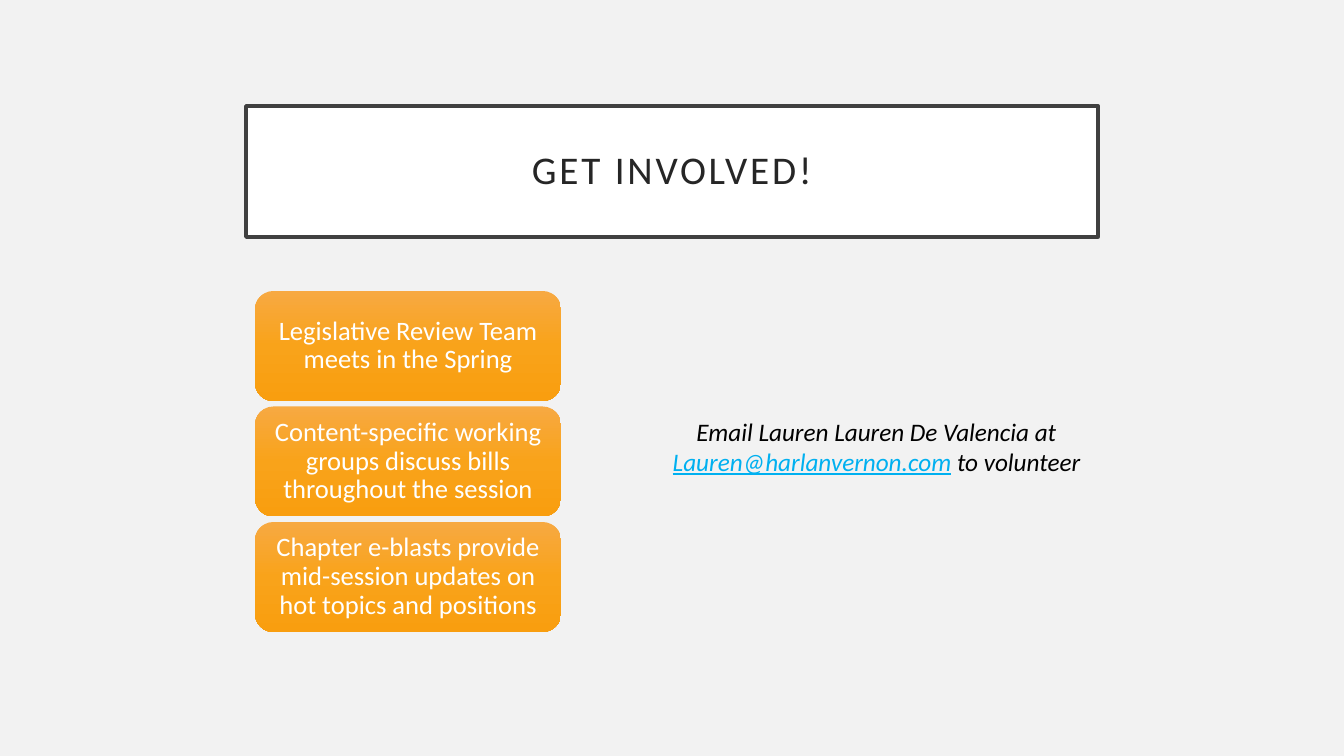
from lxml import etree
from pptx import Presentation
from pptx import util as u
from pptx.dml.color import RGBColor
from pptx.enum import shapes, text
from pptx.oxml.ns import qn

FONT = "Calibri"
TITLE = "GET INVOLVED!"
ACTIONS = [
    "Legislative Review Team meets in the Spring",
    "Content-specific working groups discuss bills throughout the session",
    "Chapter e-blasts provide mid-session updates on hot topics and positions",
]
CONTACT = [  # text, colour, underlined
    ("Email Lauren Lauren De Valencia at ", "000000", False),
    ("Lauren@harlanvernon.com", "00B0F0", True),
    (" to volunteer", "000000", False),
]
ORANGE = [(0, "F7A942"), (50, "F9A31A"), (100, "F99E0F")]

TITLE_BOX = (246, 106, 852, 131)
CONTACT_BOX = (655, 411, 443, 72)
CARD_X, CARD_W, CARD_H = 255, 306, 110
CARDS_TOP, CARDS_BOTTOM = 291, 632


def px(n):
    return u.Emu(round(n * 914400 / 100.8))


def rgb(value):
    return RGBColor.from_string(value)


def set_frame(tf, inset_x, inset_y, anchor):
    tf.word_wrap = True
    tf.auto_size = text.MSO_AUTO_SIZE.NONE
    tf.vertical_anchor = anchor
    tf.margin_left = tf.margin_right = px(inset_x)
    tf.margin_top = tf.margin_bottom = px(inset_y)


def add_run(p, words, size, color):
    p.alignment = text.PP_ALIGN.CENTER
    r = p.add_run()
    r.text = words
    r.font.name = FONT
    r.font.size = u.Pt(size)
    r.font.color.rgb = rgb(color)
    return r


def fill_gradient(sp, stops):
    """Fill from top to bottom with any number of (percent, colour) stops."""
    sp.fill.gradient()
    sp.fill.gradient_angle = 270
    gs_list = sp._element.spPr.find(qn("a:gradFill")).find(qn("a:gsLst"))
    for gs in list(gs_list):
        gs_list.remove(gs)
    for percent, color in stops:
        gs = etree.SubElement(gs_list, qn("a:gs"), pos=str(percent * 1000))
        etree.SubElement(gs, qn("a:srgbClr"), val=color)


def add_title(s):
    sp = s.shapes.title
    sp.left, sp.top, sp.width, sp.height = map(px, TITLE_BOX)
    sp.fill.solid()
    sp.fill.fore_color.rgb = rgb("FFFFFF")
    sp.line.color.rgb = rgb("404040")
    sp.line.width = u.Pt(2.5)
    set_frame(sp.text_frame, 20, 20, text.MSO_ANCHOR.MIDDLE)
    p = sp.text_frame.paragraphs[0]
    p.line_spacing = 0.9
    r = add_run(p, TITLE, 28, "262626")
    r.font._element.set("spc", "200")


def add_card(s, top, words):
    sp = s.shapes.add_shape(shapes.MSO_SHAPE.ROUNDED_RECTANGLE,
                            px(CARD_X), px(top), px(CARD_W), px(CARD_H))
    sp.shadow.inherit = False
    fill_gradient(sp, ORANGE)
    sp.line.fill.background()
    set_frame(sp.text_frame, 8, 4, text.MSO_ANCHOR.MIDDLE)
    p = sp.text_frame.paragraphs[0]
    p.line_spacing = 0.9
    add_run(p, words, 19, "FFFFFF")


def add_contact(s):
    tf = s.shapes.add_textbox(*map(px, CONTACT_BOX)).text_frame
    set_frame(tf, 10, 5, text.MSO_ANCHOR.TOP)
    tf.auto_size = text.MSO_AUTO_SIZE.SHAPE_TO_FIT_TEXT
    for words, color, underlined in CONTACT:
        r = add_run(tf.paragraphs[0], words, 18, color)
        r.font.italic = True
        r.font.underline = underlined


def main():
    prs = Presentation()
    prs.slide_width, prs.slide_height = px(1344), px(756)
    s = prs.slides.add_slide(prs.slide_layouts[5])
    s.background.fill.solid()
    s.background.fill.fore_color.rgb = rgb("F2F2F2")
    add_title(s)
    pitch = (CARDS_BOTTOM - CARDS_TOP - CARD_H) / (len(ACTIONS) - 1)
    for i, words in enumerate(ACTIONS):
        add_card(s, CARDS_TOP + i * pitch, words)
    add_contact(s)
    prs.save("out.pptx")


if __name__ == "__main__":
    main()
